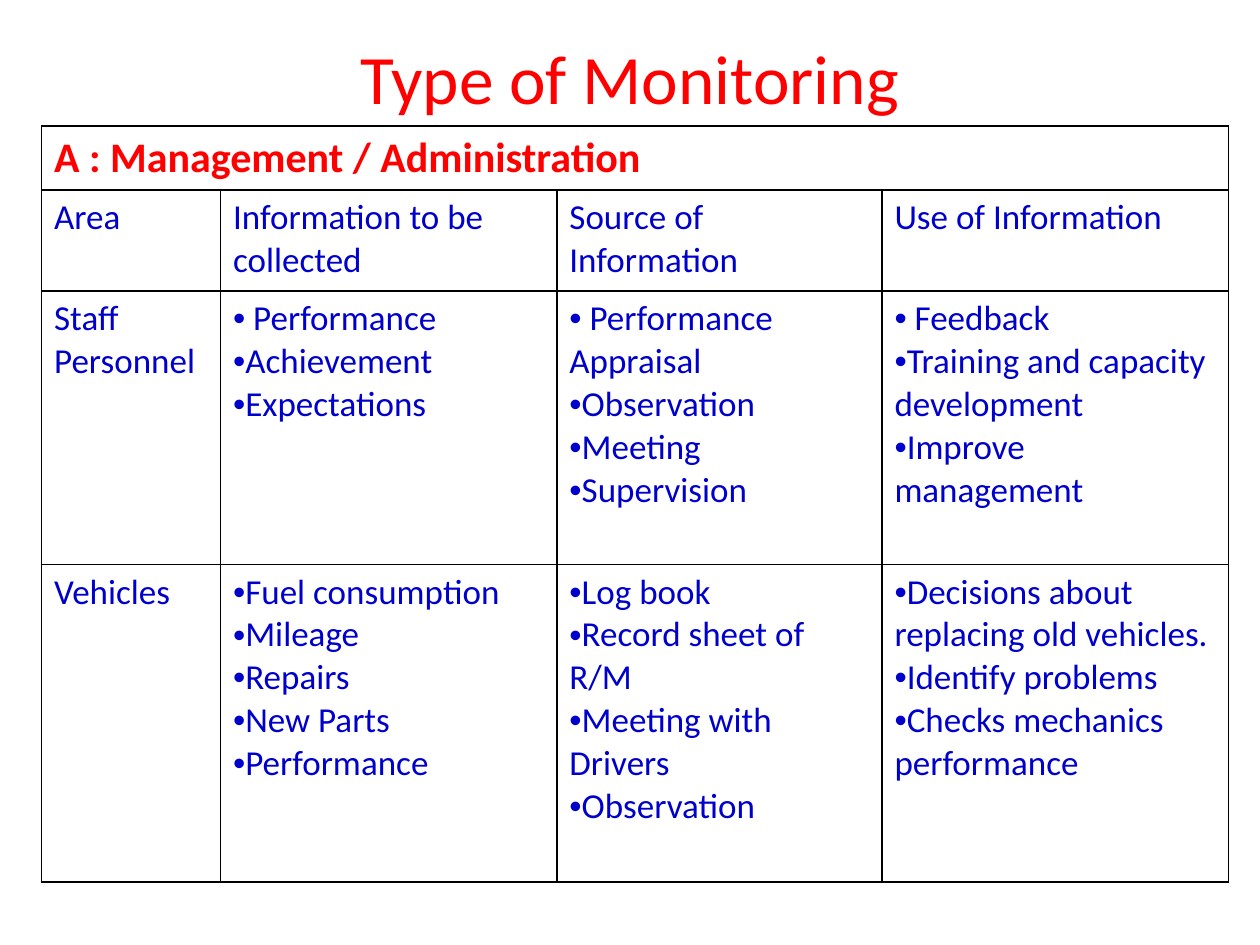
from lxml import etree
from pptx import Presentation
from pptx import util as u
from pptx.dml.color import RGBColor
from pptx.enum import text
from pptx.oxml import ns

RED, BLUE, BLACK, WHITE = "FF0000", "0000CC", "000000", "FFFFFF"
COLUMN_WIDTHS = [1.42, 2.67, 2.58, 2.75]
ROW_HEIGHTS = [0.51, 0.8, 2.17, 2.52]
SECTION = "A : Management / Administration"
HEADINGS = ["Area", "Information to be collected", "Source of Information", "Use of Information"]
AREAS = [
    ["Staff Personnel",
     [" Performance", "Achievement", "Expectations"],
     [" Performance Appraisal", "Observation", "Meeting", "Supervision"],
     [" Feedback", "Training and capacity development", "Improve management"]],
    ["Vehicles",
     ["Fuel consumption", "Mileage", "Repairs", "New Parts", "Performance"],
     ["Log book", "Record sheet of R/M", "Meeting with Drivers", "Observation"],
     ["Decisions about replacing old vehicles.", "Identify problems",
      "Checks mechanics performance"]],
]


def rgb(value):
    return RGBColor.from_string(value)


def format_text(frame, size, color, bold=False):
    for paragraph in frame.paragraphs:
        for run in paragraph.runs:
            run.font.name = "Calibri"
            run.font.size = u.Pt(size)
            run.font.bold = bold
            run.font.color.rgb = rgb(color)


def add_bullet(paragraph):
    properties = paragraph._p.get_or_add_pPr()
    properties.set("marL", "0")
    properties.set("indent", "0")
    font = etree.SubElement(properties, ns.qn("a:buFont"))
    font.set("typeface", "Arial")
    etree.SubElement(properties, ns.qn("a:buChar")).set("char", "•")


def style_cell(cell):
    properties = cell._tc.get_or_add_tcPr()
    for side in ("lnL", "lnR", "lnT", "lnB"):
        border = etree.SubElement(properties, ns.qn(f"a:{side}"), w=str(u.Pt(1)))
        fill = etree.SubElement(border, ns.qn("a:solidFill"))
        etree.SubElement(fill, ns.qn("a:srgbClr"), val=BLACK)
    cell.fill.solid()
    cell.fill.fore_color.rgb = rgb(WHITE)


def write_cell(cell, content):
    frame = cell.text_frame
    if isinstance(content, list):
        frame.text = "\n".join(content)
        for paragraph in frame.paragraphs:
            add_bullet(paragraph)
    else:
        frame.text = content
    format_text(frame, 20, BLUE)


def add_title(slide, wording):
    title = slide.shapes.add_textbox(u.Inches(0.5), u.Inches(0.3), u.Inches(9), u.Inches(0.62))
    frame = title.text_frame
    frame.word_wrap = True
    frame.vertical_anchor = text.MSO_ANCHOR.MIDDLE
    frame.text = wording
    frame.paragraphs[0].alignment = text.PP_ALIGN.CENTER
    format_text(frame, 39.6, RED)


def add_monitoring_table(slide):
    rows = [HEADINGS] + AREAS
    table = slide.shapes.add_table(
        len(ROW_HEIGHTS), len(COLUMN_WIDTHS), u.Inches(0.33), u.Inches(1),
        u.Inches(sum(COLUMN_WIDTHS)), u.Inches(sum(ROW_HEIGHTS))).table
    table.first_row = False
    table.horz_banding = False
    for column, width in zip(table.columns, COLUMN_WIDTHS):
        column.width = u.Inches(width)
    for row, height in zip(table.rows, ROW_HEIGHTS):
        row.height = u.Inches(height)
    for cell in table.iter_cells():
        style_cell(cell)
    section = table.cell(0, 0)
    section.merge(table.cell(0, len(COLUMN_WIDTHS) - 1))
    section.text_frame.text = SECTION
    format_text(section.text_frame, 24, RED, bold=True)
    for row_index, contents in enumerate(rows, start=1):
        for column_index, content in enumerate(contents):
            write_cell(table.cell(row_index, column_index), content)


def main():
    deck = Presentation()
    deck.slide_width = u.Inches(10)
    deck.slide_height = u.Inches(7.5)
    slide = deck.slides.add_slide(deck.slide_layouts[6])
    add_title(slide, "Type of Monitoring")
    add_monitoring_table(slide)
    deck.save("out.pptx")


if __name__ == "__main__":
    main()
